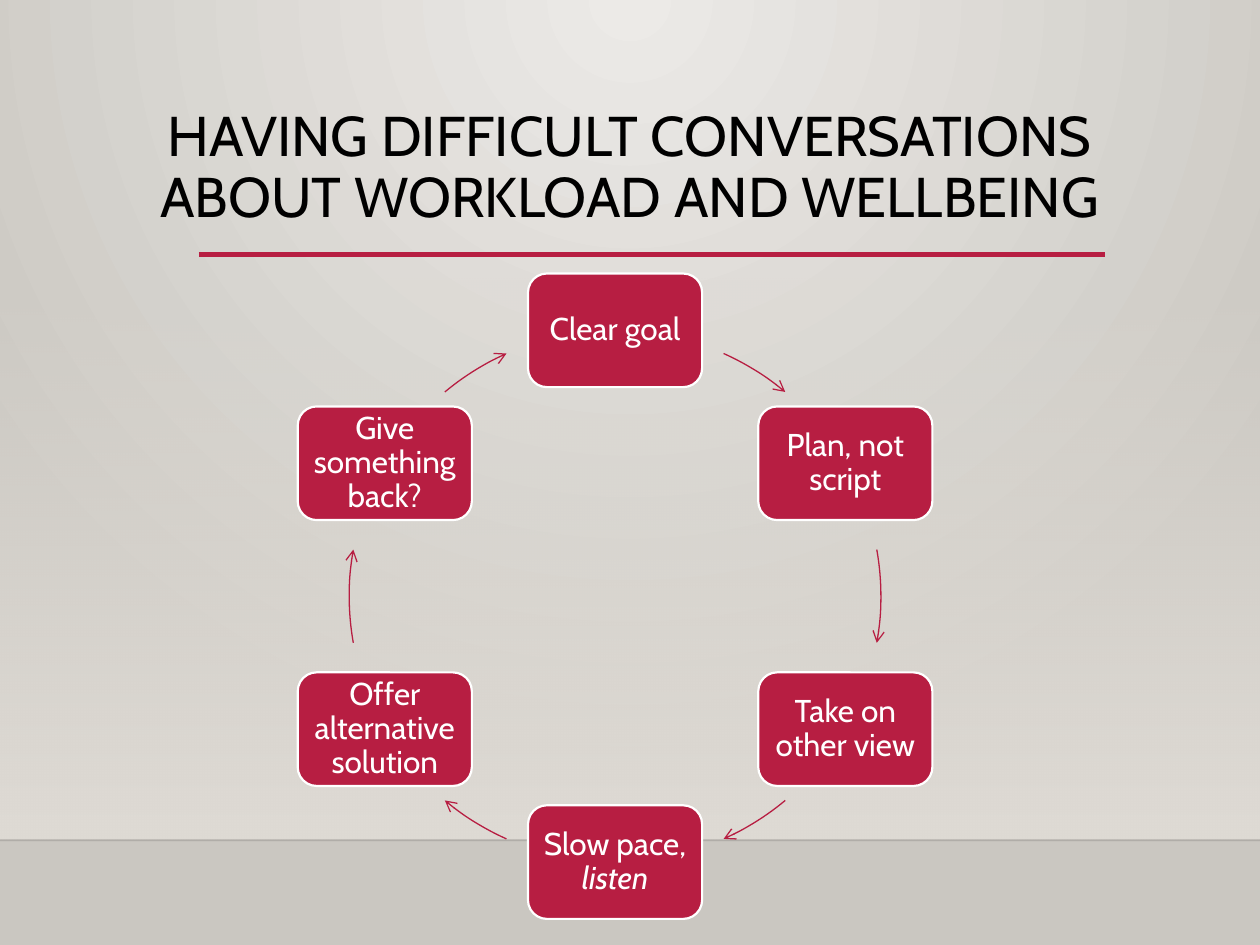
from dataclasses import dataclass
from math import cos, radians, sin

from lxml import etree
from pptx import Presentation
from pptx import util as u
from pptx.dml.color import RGBColor
from pptx.enum import shapes, text
from pptx.oxml.ns import qn

FONT = "Cabin"
CRIMSON, WHITE, BLACK = "B71E42", "FFFFFF", "000000"
SAND = "DFDBD5"
CENTRE_X, CENTRE_Y, RADIUS = 12.4, 12.02, 5.36
STEP_WIDTH, STEP_HEIGHT = 3.51, 2.29


@dataclass
class Step:
    label: str
    arc_start: float
    arc_end: float
    emphasis: str = ""


STEPS = [
    Step("Clear goal", 24.1, 39.8),
    Step("Plan, not script", 79.9, 100.1),
    Step("Take on other view", 140.2, 155.9),
    Step("Slow pace, ", 204.1, 219.8, emphasis="listen"),
    Step("Offer alternative solution", 259.9, 280.1),
    Step("Give something back?", 320.2, 335.9),
]


def paint(color, value: str) -> None:
    color.rgb = RGBColor.from_string(value)


def set_alpha(fill_parent, percent: int) -> None:
    color = next(fill_parent.iter(qn("a:srgbClr")))
    etree.SubElement(color, qn("a:alpha"), val=str(percent * 1000))


def format_paragraph(paragraph, size: float, color: str) -> None:
    paragraph.alignment = text.PP_ALIGN.CENTER
    paragraph.line_spacing = 0.9
    for run in paragraph.runs:
        run.font.name = FONT
        run.font.size = u.Pt(size)
        paint(run.font.color, color)


def draw_background(slide) -> None:
    fill = slide.background.fill
    fill.gradient()
    for stop, value in zip(fill.gradient_stops, ("ECEAE7", "CAC7C1")):
        paint(stop.color, value)
    gradient = next(slide.element.iter(qn("a:gradFill")))
    gradient.remove(gradient.find(qn("a:lin")))
    circle = etree.SubElement(gradient, qn("a:path"), path="circle")
    etree.SubElement(circle, qn("a:fillToRect"),
                     l="43000", t="0", r="43000", b="100000")


def draw_wall(slide) -> None:
    wall = slide.shapes.add_shape(shapes.MSO_SHAPE.RECTANGLE, 0, u.Cm(5.6),
                                  u.Cm(25.4), u.Cm(11.34))
    wall.shadow.inherit = False
    wall.line.fill.background()
    wall.fill.gradient()
    wall.fill.gradient_angle = 270
    for stop in wall.fill.gradient_stops:
        paint(stop.color, SAND)
    set_alpha(wall.element.spPr, 0)


def draw_rule(slide, left: float, right: float, y: float,
              color: str, width: float):
    rule = slide.shapes.add_connector(shapes.MSO_CONNECTOR.STRAIGHT,
                                      u.Cm(left), u.Cm(y), u.Cm(right), u.Cm(y))
    paint(rule.line.color, color)
    rule.line.width = u.Pt(width)
    etree.SubElement(rule.element.spPr, qn("a:effectLst"))
    return rule


def draw_title(slide, wording: str) -> None:
    title = slide.shapes.add_textbox(u.Cm(1.9), u.Cm(2.06), u.Cm(21.6), u.Cm(3.84))
    title.text_frame.word_wrap = True
    title.text_frame.text = wording
    format_paragraph(title.text_frame.paragraphs[0], 32, BLACK)


def draw_step(slide, step: Step, angle: float) -> None:
    x = CENTRE_X + RADIUS * sin(radians(angle))
    y = CENTRE_Y - RADIUS * cos(radians(angle))
    box = slide.shapes.add_shape(
        shapes.MSO_SHAPE.ROUNDED_RECTANGLE,
        u.Cm(x - STEP_WIDTH / 2), u.Cm(y - STEP_HEIGHT / 2),
        u.Cm(STEP_WIDTH), u.Cm(STEP_HEIGHT))
    box.shadow.inherit = False
    box.fill.solid()
    paint(box.fill.fore_color, CRIMSON)
    paint(box.line.color, WHITE)
    box.line.width = u.Pt(1.25)

    frame = box.text_frame
    frame.word_wrap = True
    frame.vertical_anchor = text.MSO_ANCHOR.MIDDLE
    frame.margin_left = frame.margin_right = u.Cm(0.18)
    frame.margin_top = frame.margin_bottom = u.Cm(0.18)
    frame.text = step.label
    paragraph = frame.paragraphs[0]
    if step.emphasis:
        emphasis = paragraph.add_run()
        emphasis.text = step.emphasis
        emphasis.font.italic = True
    format_paragraph(paragraph, 18, WHITE)


def draw_arc(slide, start: float, end: float) -> None:
    arc = slide.shapes.add_shape(
        shapes.MSO_SHAPE.ARC, u.Cm(CENTRE_X - RADIUS), u.Cm(CENTRE_Y - RADIUS),
        u.Cm(2 * RADIUS), u.Cm(2 * RADIUS))
    for index, angle in enumerate((start, end)):
        arc.adjustments[index] = (angle - 90) % 360 * 0.6
    arc.shadow.inherit = False
    arc.fill.background()
    paint(arc.line.color, CRIMSON)
    arc.line.width = u.Pt(0.75)
    etree.SubElement(arc.element.spPr.find(qn("a:ln")), qn("a:tailEnd"), type="arrow")


def main() -> None:
    deck = Presentation()
    deck.slide_width, deck.slide_height = u.Cm(25.4), u.Cm(19.05)
    slide = deck.slides.add_slide(deck.slide_layouts[6])

    draw_background(slide)
    draw_wall(slide)
    floor_edge = draw_rule(slide, 0, 25.4, 16.94, BLACK, 1)
    set_alpha(floor_edge.element.spPr, 20)
    draw_rule(slide, 4.01, 22.27, 5.13, CRIMSON, 2.5)
    draw_title(slide, "HAVING DIFFICULT CONVERSATIONS\vABOUT WORKLOAD AND WELLBEING")

    for index, step in enumerate(STEPS):
        draw_step(slide, step, index * 360 / len(STEPS))
        draw_arc(slide, step.arc_start, step.arc_end)

    deck.save("out.pptx")


if __name__ == "__main__":
    main()
